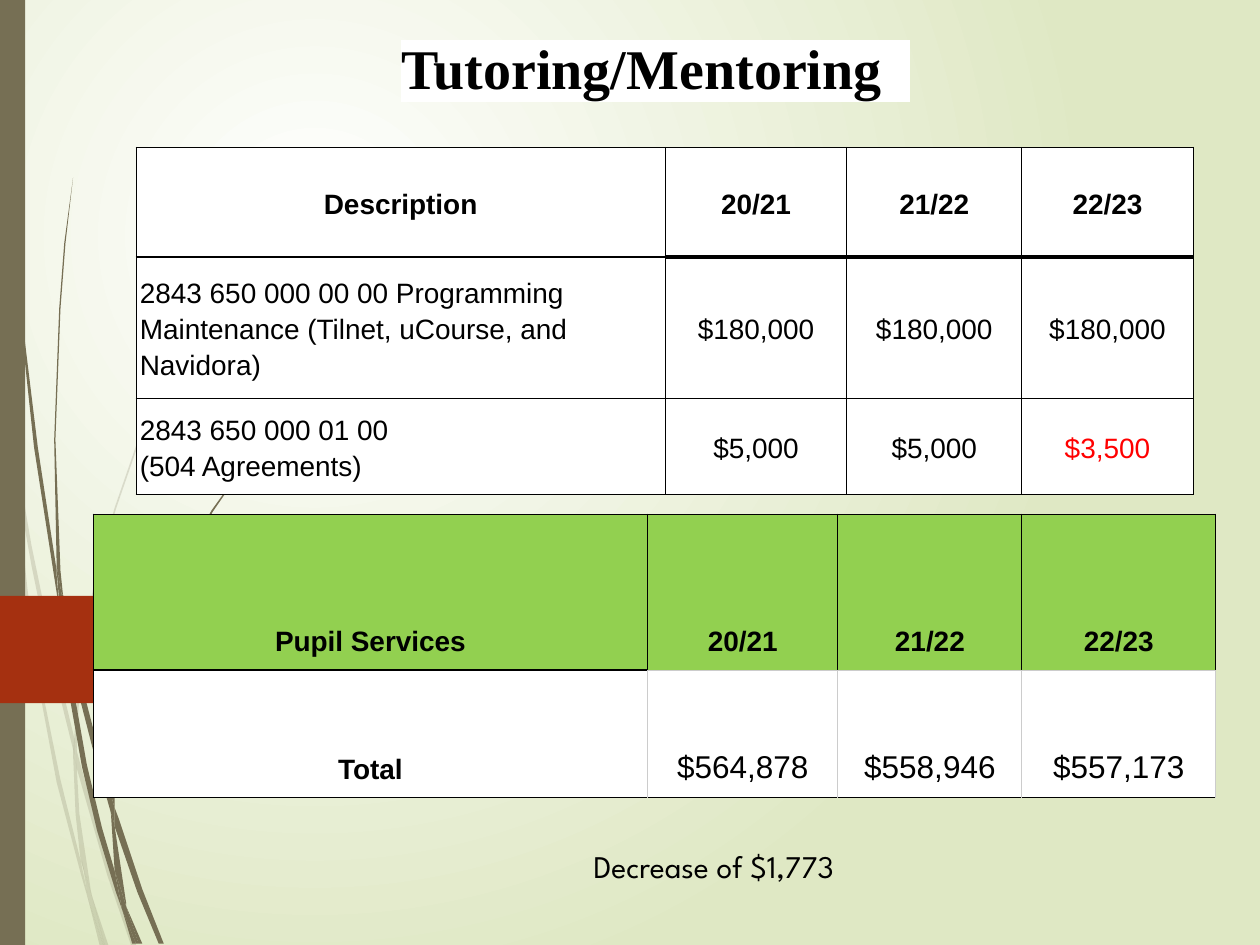
import pptx
import pptx.dml.color
import pptx.enum.shapes
import pptx.enum.text
import pptx.oxml
import pptx.oxml.ns
import pptx.util
import lxml.etree

Inches = pptx.util.Inches
Pt = pptx.util.Pt
color = pptx.dml.color.RGBColor.from_string
qn = pptx.oxml.ns.qn
CENTER = pptx.enum.text.PP_ALIGN.CENTER
LEFT = pptx.enum.text.PP_ALIGN.LEFT
MIDDLE = pptx.enum.text.MSO_ANCHOR.MIDDLE
BOTTOM = pptx.enum.text.MSO_ANCHOR.BOTTOM
OLIVE = "766F54"


def write_text(frame, lines, alignment, text_color="000000", spacing=1.0, **font_format):
    """Write one paragraph per line; font_format holds font attributes."""
    frame.word_wrap = True
    for index, line in enumerate(lines):
        paragraph = frame.paragraphs[0] if index == 0 else frame.add_paragraph()
        paragraph.alignment = alignment
        paragraph.line_spacing = spacing
        run = paragraph.add_run()
        run.text = line
        run.font.color.rgb = color(text_color)
        for name, value in font_format.items():
            setattr(run.font, name, value)


def set_borders(cell, **edges):
    """Each edge (L, R, T, B, in that order) is a pair of colour and points."""
    properties = cell._tc.get_or_add_tcPr()
    for position, (edge, (line_color, points)) in enumerate(edges.items()):
        line = lxml.etree.Element(qn(f"a:ln{edge}"), w=str(Pt(points)))
        fill = lxml.etree.SubElement(line, qn("a:solidFill"))
        lxml.etree.SubElement(fill, qn("a:srgbClr"), val=line_color)
        properties.insert(position, line)


presentation = pptx.Presentation()
presentation.slide_width = Inches(10)
presentation.slide_height = Inches(7.5)
slide = presentation.slides.add_slide(presentation.slide_layouts[6])
shapes = slide.shapes

# Background: a circular gradient
background = slide.background.fill
background.gradient()
for stop, stop_color in zip(background.gradient_stops, ["FFFFFF", "DFE8C4"]):
    stop.color.rgb = color(stop_color)
gradient = slide._element.find(".//" + qn("a:gradFill"))
linear = gradient.find(qn("a:lin"))
circle = lxml.etree.Element(qn("a:path"), {"path": "circle"})
lxml.etree.SubElement(circle, qn("a:fillToRect"), l="50000", t="50000", r="100000", b="100000")
gradient.replace(linear, circle)

# Grass blades on the left: faint ones behind, solid ones in front
faint_blades = [
    [(0.08, 3.5), (0.06, 3.22), (0, 2.82), (0, 2.99), (0.07, 3.44)],
    [(0.4, 5.22), (0.59, 5.99), (0.59, 5.86), (0.43, 5.2), (0.25, 4.33), (0.1, 3.45),
     (0.12, 3.76), (0.25, 4.49)],
    [(0.64, 6.07), (0.61, 5.96), (0.61, 6.1), (0.85, 6.94), (1.04, 7.5), (1.08, 7.5), (0.88, 6.92)],
    [(0.83, 7.5), (0.86, 7.5), (0.73, 7.11)],
    [(0.64, 6.83), (0.48, 6.19), (0.33, 5.45), (0.22, 4.69), (0.12, 3.76), (0.08, 3.5),
     (0.19, 4.7), (0.31, 5.46), (0.45, 6.21), (0.64, 6.93), (0.7, 7.14), (0.69, 7.07)],
    [(0.58, 5.99), (0.6, 6.46), (0.64, 6.83), (0.67, 6.92), (0.73, 7.11), (0.72, 7.06),
     (0.63, 6.46), (0.61, 6.1), (0.61, 6.08)],
    [(0.61, 5.84), (0.65, 5.22), (0.76, 4.62), (0.92, 4.04), (1.11, 3.49), (1.59, 2.45),
     (1.87, 1.98), (2.01, 1.75), (2.17, 1.54), (2.17, 1.53), (2.01, 1.75), (1.86, 1.97),
     (1.58, 2.44), (1.1, 3.48), (0.91, 4.03), (0.75, 4.61), (0.64, 5.22), (0.59, 5.84),
     (0.59, 5.86), (0.61, 5.96)],
    [(0.7, 7.14), (0.79, 7.5), (0.82, 7.5)],
    [(0.61, 6.08), (0.61, 6.1), (0.61, 5.96), (0.59, 5.86), (0.58, 5.99)],
    [(0.67, 6.92), (0.65, 6.83), (0.69, 7.07), (0.7, 7.14), (0.82, 7.5), (0.83, 7.5), (0.73, 7.11)],
]
solid_blades = [
    [(0.05, 1.1), (0.14, 2.33), (0.27, 3.55), (0.46, 4.77), (0.47, 4.81), (0.45, 4.57),
     (0.45, 4.53), (0.3, 3.55), (0.15, 2.32), (0.06, 1.09), (0.04, 0.48), (0.03, 0),
     (0.02, 0), (0.03, 0.48)],
    [(0.73, 5.92), (0.88, 6.45), (0.88, 6.31), (0.77, 5.9), (0.62, 5.32), (0.5, 4.72),
     (0.53, 5.05), (0.62, 5.49)],
    [(0.94, 6.49), (0.91, 6.41), (0.91, 6.56), (1.09, 7.08), (1.26, 7.49), (1.3, 7.49), (1.13, 7.06)],
    [(0.91, 6.91), (0.81, 6.57), (0.69, 6.07), (0.6, 5.56), (0.53, 5.05), (0.47, 4.77),
     (0.56, 5.57), (0.65, 6.08), (0.77, 6.59), (0.92, 7.08), (0.97, 7.22), (0.96, 7.17)],
    [(0.5, 4.72), (0.48, 4.53), (0.44, 3.49), (0.48, 2.45), (0.52, 1.93), (0.58, 1.41),
     (0.51, 1.93), (0.47, 2.45), (0.43, 3.49), (0.45, 4.49), (0.49, 4.72)],
    [(1.1, 7.49), (1.13, 7.49), (1, 7.19)],
    [(0.47, 4.77), (0.53, 5.05), (0.5, 4.72), (0.49, 4.72), (0.45, 4.49), (0.45, 4.53)],
    [(0.91, 6.33), (0.95, 5.92), (1.03, 5.52), (1.16, 5.13), (1.31, 4.76), (1.69, 4.06),
     (1.91, 3.74), (2.03, 3.59), (2.16, 3.44), (2.15, 3.44), (2.03, 3.58), (1.91, 3.73),
     (1.68, 4.05), (1.29, 4.74), (1.14, 5.12), (1.01, 5.51), (0.92, 5.91), (0.88, 6.31), (0.91, 6.41)],
    [(0.97, 7.22), (1.05, 7.49), (1.08, 7.49)],
    [(0.88, 6.45), (0.91, 6.91), (0.96, 7.06), (1, 7.19), (1, 7.16), (0.91, 6.56), (0.9, 6.51)],
    [(0.88, 6.45), (0.9, 6.51), (0.91, 6.56), (0.91, 6.41), (0.88, 6.31)],
    [(0.96, 7.06), (0.91, 6.91), (0.96, 7.17), (0.97, 7.22), (1.08, 7.49), (1.1, 7.49), (1, 7.19)],
]
for blades, opacity in [(faint_blades, 20), (solid_blades, 100)]:
    for blade in blades:
        points = [(Inches(x), Inches(y)) for x, y in blade]
        builder = shapes.build_freeform(*points[0])
        builder.add_line_segments(points[1:])
        shape = builder.convert_to_shape()
        shape.shadow.inherit = False
        shape.line.fill.background()
        shape.fill.solid()
        shape.fill.fore_color.rgb = color(OLIVE)
        if opacity < 100:
            fill_color = shape._element.spPr.find(".//" + qn("a:srgbClr"))
            lxml.etree.SubElement(fill_color, qn("a:alpha"), val=str(opacity * 1000))

# Side bar and page marker
preset = pptx.enum.shapes.MSO_SHAPE
for kind, box, fill_color in [
    (preset.RECTANGLE, (0, 0, 0.2, 7.5), OLIVE),
    (preset.PENTAGON, (0, 4.73, 1.5, 0.85), "A53010"),
]:
    shape = shapes.add_shape(kind, *map(Inches, box))
    shape.shadow.inherit = False
    shape.line.fill.background()
    shape.fill.solid()
    shape.fill.fore_color.rgb = color(fill_color)

# Tables: horizontal rules run top to bottom, vertical rules left to right
thin, medium, thick, pale = ("000000", 0.75), ("000000", 1.5), ("000000", 2.25), ("CCCCCC", 0.75)
program_table = {
    "place": (1.08, 1.17), "columns": [4.2, 1.44, 1.39, 1.36], "rows": [0.87, 1.12, 0.76],
    "header_fill": "FFFFFF", "anchor": MIDDLE, "amount_size": 16, "label_bold": False,
    "label_alignment": LEFT, "label_spacing": 1.15,
    "horizontal": [[thin] * 4, [medium] + [thick] * 3, [thin] * 4, [thin] * 4],
    "vertical": [[thin] * 5] * 3,
    "text": [
        ["Description", "20/21", "21/22", "22/23"],
        ["2843 650 000 00 00 Programming Maintenance (Tilnet, uCourse, and Navidora)",
         "$180,000", "$180,000", "$180,000"],
        ["2843 650 000 01 00\n(504 Agreements)", "$5,000", "$5,000", "$3,500"],
    ],
}
total_table = {
    "place": (0.74, 4.08), "columns": [4.4, 1.51, 1.46, 1.54], "rows": [1.24, 1.01],
    "header_fill": "92D050", "anchor": BOTTOM, "amount_size": 18, "label_bold": True,
    "label_alignment": CENTER, "label_spacing": 1.0,
    "horizontal": [[thin] * 4, [medium] + [pale] * 3, [thin] * 4],
    "vertical": [[thin] * 5, [thin] + [pale] * 4],
    "text": [
        ["Pupil Services", "20/21", "21/22", "22/23"],
        ["Total", "$564,878", "$558,946", "$557,173"],
    ],
}
for data in [program_table, total_table]:
    columns, rows = data["columns"], data["rows"]
    frame = shapes.add_table(len(rows), len(columns), *map(Inches, (*data["place"], sum(columns), sum(rows))))
    table = frame.table
    table.first_row = table.horz_banding = False
    for column, width in zip(table.columns, columns):
        column.width = Inches(width)
    for row, height in zip(table.rows, rows):
        row.height = Inches(height)
    for r, texts in enumerate(data["text"]):
        for c, text in enumerate(texts):
            cell = table.cell(r, c)
            header, label = r == 0, r > 0 and c == 0
            cell.vertical_anchor = data["anchor"]
            cell.margin_left = cell.margin_right = Inches(0.03)
            cell.margin_top = cell.margin_bottom = Inches(0.1)
            cell.fill.solid()
            cell.fill.fore_color.rgb = color(data["header_fill"] if header else "FFFFFF")
            write_text(
                cell.text_frame, text.split("\n"),
                data["label_alignment"] if label else CENTER,
                text_color="FF0000" if text == "$3,500" else "000000",
                spacing=data["label_spacing"] if label else 1.15,
                name="Arial", bold=header or (label and data["label_bold"]),
                size=Pt(16 if header or label else data["amount_size"]))
            vertical, horizontal = data["vertical"][r], data["horizontal"]
            set_borders(cell, L=vertical[c], R=vertical[c + 1], T=horizontal[r][c], B=horizontal[r + 1][c])

# Title with a white highlight
title = shapes.add_textbox(*map(Inches, (0.75, 0.17, 8.91, 0.74)))
title.text_frame.margin_top = title.text_frame.margin_bottom = Inches(0.1)
write_text(title.text_frame, ["Tutoring/Mentoring  "], CENTER, name="Times New Roman", size=Pt(32), bold=True)
highlight = lxml.etree.Element(qn("a:highlight"))
lxml.etree.SubElement(highlight, qn("a:srgbClr"), val="FFFFFF")
title._element.find(".//" + qn("a:rPr")).find(qn("a:solidFill")).addnext(highlight)

note = shapes.add_textbox(*map(Inches, (2.83, 6.67, 5.67, 0.4)))
write_text(note.text_frame, ["Decrease of $1,773"], CENTER, name="League Spartan", size=Pt(18))

presentation.save("out.pptx")
